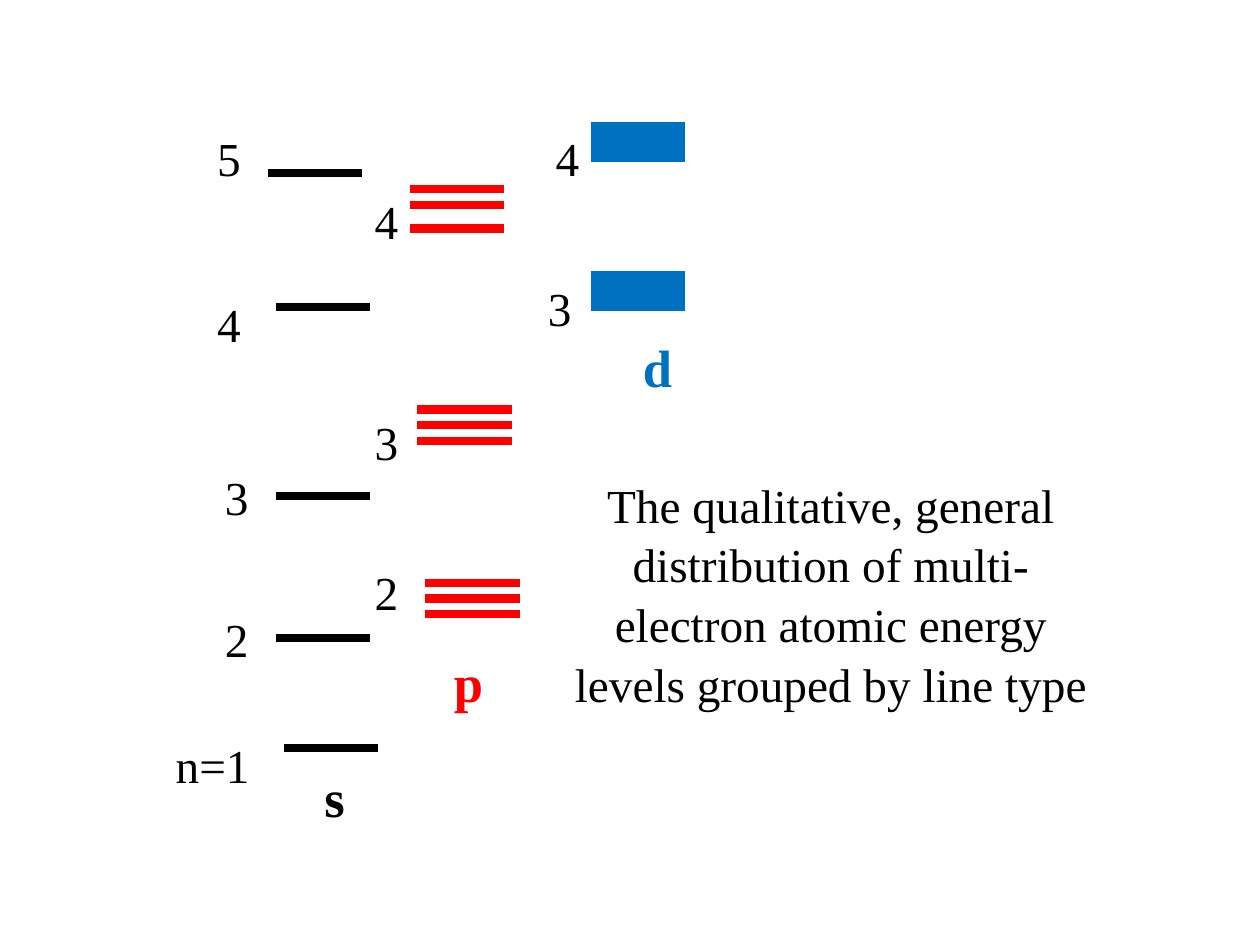
from lxml.etree import SubElement
from pptx import Presentation
from pptx.dml.color import RGBColor
from pptx.enum.shapes import MSO_CONNECTOR as Connector
from pptx.enum.text import MSO_AUTO_SIZE as AutoSize, PP_ALIGN as Align
from pptx.oxml.ns import qn
from pptx.util import Pt

COLOURS = {"s": "000000", "p": "FF0000", "d": "0070C0", "text": "000000"}
FONT = "Times New Roman"
LINE_LENGTH, LINE_WEIGHT = 54, 4.75
LABEL_HEIGHT, DIGIT_WIDTH = 40.5, 22.5

# orbital, line left, line heights, label, label left, label top, label width
LEVELS = [
    ("s", 162, [427.5], "n=1", 90, 414, 63),
    ("s", 157.5, [364.5], "2", 121.5, 342, DIGIT_WIDTH),
    ("s", 157.5, [283.5], "3", 121.5, 261, DIGIT_WIDTH),
    ("s", 157.5, [175.5], "4", 117, 162, DIGIT_WIDTH),
    ("s", 153, [99], "5", 117, 67.5, DIGIT_WIDTH),
    ("p", 243, [333, 342, 351], "2", 207, 315, DIGIT_WIDTH),
    ("p", 238.5, [234, 243, 252], "3", 207, 229.5, DIGIT_WIDTH),
    ("p", 234, [108, 117, 130.5], "4", 207, 103.5, DIGIT_WIDTH),
    ("d", 337.5, [157.5 + 4.5 * i for i in range(5)], "3", 306, 153, DIGIT_WIDTH),
    ("d", 337.5, [72 + 4.5 * i for i in range(5)], "4", 310.5, 67.5, DIGIT_WIDTH),
]
ORBITAL_NAMES = [("s", 166.5, 430.5), ("p", 243, 364.5), ("d", 351, 184.5)]
CAPTION = ("The qualitative, general distribution of multi-electron "
           "atomic energy levels grouped by line type")


def add_level_line(page, left, top, colour):
    line = page.shapes.add_connector(
        Connector.STRAIGHT, Pt(left), Pt(top), Pt(left + LINE_LENGTH), Pt(top))
    line.line.color.rgb = RGBColor.from_string(colour)
    line.line.width = Pt(LINE_WEIGHT)
    SubElement(line._element.spPr, qn("a:effectLst"))


def add_text(page, text, left, top, width, height, colour, size=27, bold=False):
    box = page.shapes.add_textbox(Pt(left), Pt(top), Pt(width), Pt(height))
    frame = box.text_frame
    frame.text = text
    frame.word_wrap = True
    frame.auto_size = AutoSize.SHAPE_TO_FIT_TEXT
    frame.margin_top = Pt(5)
    para = frame.paragraphs[0]
    para.alignment = Align.CENTER
    para.line_spacing = 1.05
    font = para.runs[0].font
    font.name, font.size, font.bold = FONT, Pt(size), bold
    font.color.rgb = RGBColor.from_string(colour)


def main():
    deck = Presentation()
    deck.slide_width, deck.slide_height = Pt(720), Pt(540)
    page = deck.slides.add_slide(deck.slide_layouts[6])

    for orbital, line_left, heights, label, left, top, width in LEVELS:
        for height in heights:
            add_level_line(page, line_left, height, COLOURS[orbital])
        add_text(page, label, left, top, width, LABEL_HEIGHT, COLOURS["text"])
    for orbital, left, top in ORBITAL_NAMES:
        add_text(page, orbital, left, top, 49.5, 44, COLOURS[orbital], 30, True)
    add_text(page, CAPTION, 319.5, 265.5, 310.5, 138, COLOURS["text"])

    deck.save("out.pptx")


if __name__ == "__main__":
    main()
